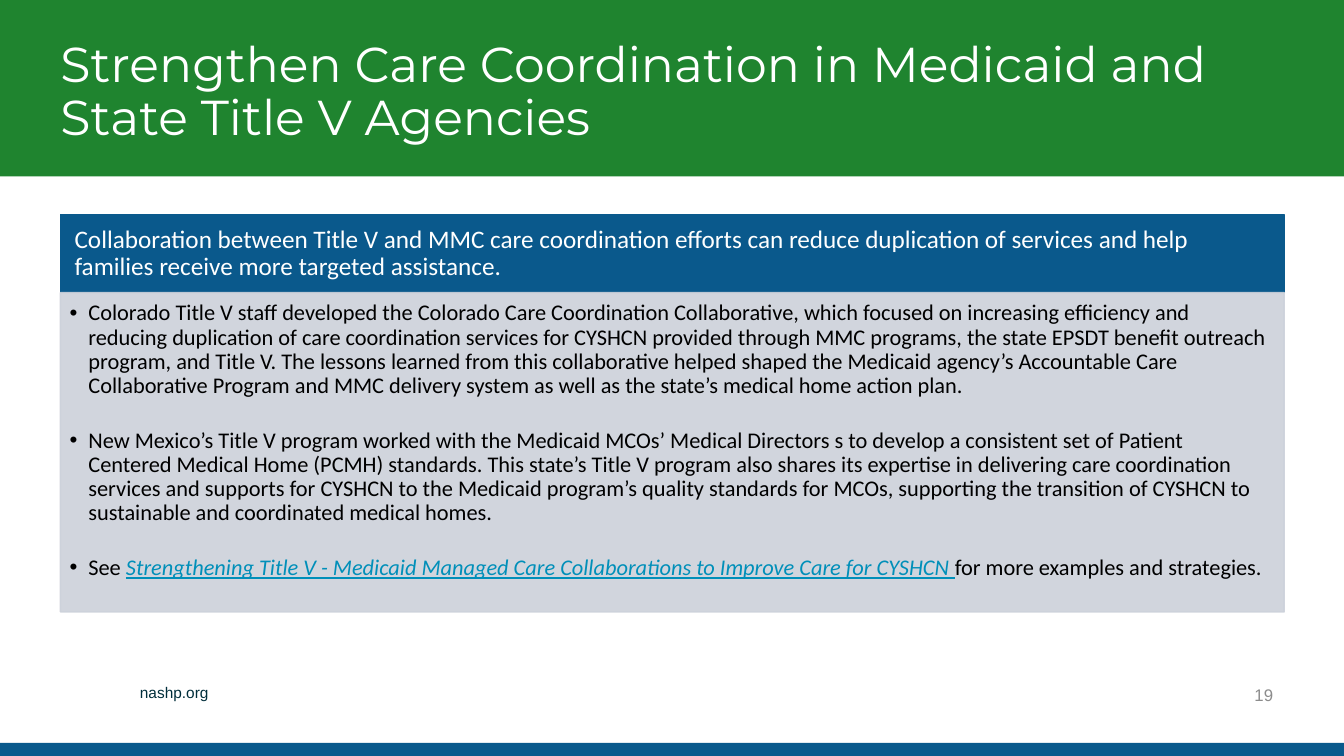
from dataclasses import dataclass

from lxml import etree
from pptx import Presentation
from pptx.dml.color import RGBColor
from pptx.enum.shapes import MSO_SHAPE
from pptx.enum.text import MSO_ANCHOR, PP_ALIGN
from pptx.oxml.ns import qn
from pptx.util import Pt

RECTANGLE = MSO_SHAPE.RECTANGLE
TOP, MIDDLE, BOTTOM = MSO_ANCHOR.TOP, MSO_ANCHOR.MIDDLE, MSO_ANCHOR.BOTTOM
RIGHT, LEFT = PP_ALIGN.RIGHT, PP_ALIGN.LEFT


@dataclass(frozen=True)
class Theme:
    green: str = "1F842F"
    footer_blue: str = "0A5A8C"
    heading_blue: str = "0A598C"
    panel_grey: str = "CCD1DA"
    white: str = "FFFFFF"
    black: str = "000000"
    link: str = "008FB9"
    site: str = "002E3B"
    number: str = "8C8C8C"
    title_size: float = 35
    heading_size: float = 18
    body_size: float = 16
    site_size: float = 11
    number_size: float = 12
    title_font: str = "Montserrat"
    body_font: str = "Calibri"
    footer_font: str = "Arial"


theme = Theme()
PAGE_WIDTH, PAGE_HEIGHT = 960, 540
MARGIN, CONTENT_WIDTH = 43.2, 874.1

deck = Presentation()
deck.slide_width, deck.slide_height = Pt(PAGE_WIDTH), Pt(PAGE_HEIGHT)
page = deck.slides.add_slide(deck.slide_layouts[6])


def add_block(left, top, width, height, color=None, anchor=TOP, insets=(7.2, 3.6, 7.2, 3.6)):
    """Add a filled rectangle, or a text box when there is no colour."""
    area = Pt(left), Pt(top), Pt(width), Pt(height)
    if color:
        box = page.shapes.add_shape(RECTANGLE, *area)
        box.shadow.inherit = False
        box.fill.solid()
        box.fill.fore_color.rgb = RGBColor.from_string(color)
        box.line.fill.background()
    else:
        box = page.shapes.add_textbox(*area)
    frame = box.text_frame
    frame.word_wrap = True
    frame.vertical_anchor = anchor
    frame.margin_left, frame.margin_top, frame.margin_right, frame.margin_bottom = map(Pt, insets)
    return box


def style(para, font, size, color, align=LEFT, spacing=0.9):
    para.alignment = align
    para.line_spacing = spacing
    para.font.name = font
    para.font.size = Pt(size)
    para.font.color.rgb = RGBColor.from_string(color)


# Bands at the top and bottom of the page
add_block(0, 0, PAGE_WIDTH, 126, theme.green)
add_block(0, 530.6, PAGE_WIDTH, 9.4, theme.footer_blue)

# Title
title = add_block(MARGIN, 15.8, CONTENT_WIDTH, 92.2, anchor=BOTTOM, insets=(0, 3.6, 7.2, 3.6))
para = title.text_frame.paragraphs[0]
para.text = "Strengthen Care Coordination in Medicaid and State Title V Agencies"
style(para, theme.title_font, theme.title_size, theme.white)

# Heading bar
heading = add_block(MARGIN, 153.2, CONTENT_WIDTH, 55.8, theme.heading_blue,
                    MIDDLE, (10.1, 5.8, 10.1, 5.8))
heading.line.color.rgb = RGBColor.from_string(theme.heading_blue)
heading.line.width = Pt(1)
para = heading.text_frame.paragraphs[0]
para.text = ("Collaboration between Title V and MMC care coordination efforts can reduce "
             "duplication of services and help families receive more targeted assistance.")
style(para, theme.body_font, theme.heading_size, theme.white)

# Slightly transparent panel
panel = add_block(MARGIN, 209, CONTENT_WIDTH, 228.2, theme.panel_grey, TOP, (6.5, 6.5, 8.6, 10.1))
panel.line.color.rgb = RGBColor.from_string(theme.panel_grey)
panel.line.width = Pt(1)
for color in panel.element.spPr.iter(qn("a:srgbClr")):
    etree.SubElement(color, qn("a:alpha"), val="90000")

# Bullets, each a list of (text, is_link) spans
bullets = [
    [("Colorado Title V staff developed the Colorado Care Coordination Collaborative, which "
      "focused on increasing efficiency and reducing duplication of care coordination services "
      "for CYSHCN provided through MMC programs, the state EPSDT benefit outreach program, and "
      "Title V. The lessons learned from this collaborative helped shaped the Medicaid agency’s "
      "Accountable Care Collaborative Program and MMC delivery system as well as the state’s "
      "medical home action plan.", False)],
    [("New Mexico’s Title V program worked with the Medicaid MCOs’ Medical Directors s to develop "
      "a consistent set of Patient Centered Medical Home (PCMH) standards. This state’s Title V "
      "program also shares its expertise in delivering care coordination services and supports "
      "for CYSHCN to the Medicaid program’s quality standards for MCOs, supporting the transition "
      "of CYSHCN to sustainable and coordinated medical homes.", False)],
    [("See ", False),
     ("Strengthening Title V - Medicaid Managed Care Collaborations to Improve Care for CYSHCN ",
      True),
     ("for more examples and strategies.", False)],
]
frame = panel.text_frame
for index, spans in enumerate(bullets):
    para = frame.add_paragraph() if index else frame.paragraphs[0]
    props = para._p.get_or_add_pPr()
    props.set("marL", str(Pt(13.5)))
    props.set("indent", str(Pt(-13.5)))
    etree.SubElement(props, qn("a:buFont"), typeface="Arial")
    etree.SubElement(props, qn("a:buChar"), char="•")
    style(para, theme.body_font, theme.body_size, theme.black)
    if index:
        para.space_before = Pt(22)
    for text, is_link in spans:
        span = para.add_run()
        span.text = text
        if is_link:
            span.font.italic = span.font.underline = True
            span.font.color.rgb = RGBColor.from_string(theme.link)

# Footer: site address and page number
site = add_block(92.9, 484.6, 451.4, 20.9)
para = site.text_frame.paragraphs[0]
para.text = "nashp.org"
style(para, theme.footer_font, theme.site_size, theme.site, spacing=1.0)

number = add_block(696.2, 481.7, 220.3, 28.8, anchor=MIDDLE)
para = number.text_frame.paragraphs[0]
para.text = "19"
style(para, theme.footer_font, theme.number_size, theme.number, RIGHT, 1.0)

deck.save("out.pptx")
